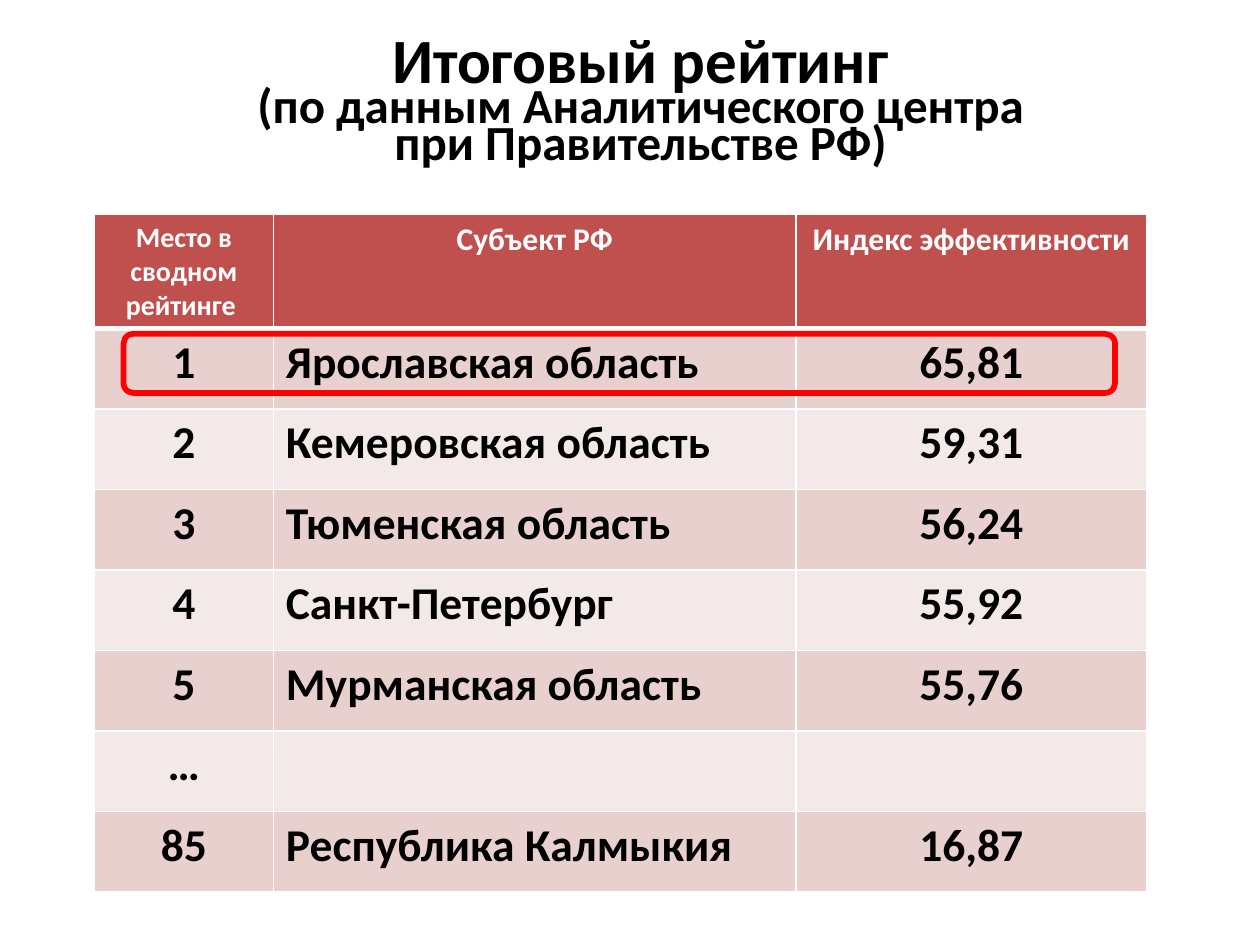
from typing import NamedTuple

import pptx
import pptx.dml.color
import pptx.enum.shapes
import pptx.enum.text
import pptx.oxml
import pptx.oxml.ns
import pptx.util

Pt = pptx.util.Pt
Align = pptx.enum.text.PP_ALIGN
Anchor = pptx.enum.text.MSO_ANCHOR

FONT = "Calibri"
BLACK, WHITE, RED = "000000", "FFFFFF", "FF0000"
HEAD, DARK, LIGHT = "C0504D", "E8D0CF", "F4E9E9"
THIN, THICK = 0.96, 3
PITCH = 10.6
WIDTHS = (102.2, 298.8, 200.2)
HEAD_H, ROW_H = 65.2, 46


class Box(NamedTuple):
    left: float
    top: float
    width: float
    height: float

    def points(self) -> list:
        return [Pt(side) for side in self]


class Place(NamedTuple):
    rank: str
    region: str = ""
    index: str = ""


class Line(NamedTuple):
    text: str
    size: float


TITLE = (
    Line("Итоговый рейтинг", 36),
    Line("(по данным Аналитического центра", 28),
    Line("при Правительстве РФ)", 28),
)
HEADER = (
    Line("Место в сводном рейтинге ", 16),
    Line("Субъект РФ", 18),
    Line("Индекс эффективности", 18),
)
PLACES = (
    Place("1", "Ярославская область", "65,81"),
    Place("2", "Кемеровская область", "59,31"),
    Place("3", "Тюменская область", "56,24"),
    Place("4", "Санкт-Петербург", "55,92"),
    Place("5", "Мурманская область", "55,76"),
    Place("…"),
    Place("85", "Республика Калмыкия", "16,87"),
)


def color(code: str) -> pptx.dml.color.RGBColor:
    return pptx.dml.color.RGBColor.from_string(code)


def write(para, text: str, *, size: float, ink: str = BLACK,
          align=Align.CENTER, pitch: float = 0, before: float = 0) -> None:
    """Fill a paragraph with bold text; pitch is an exact line spacing."""
    para.alignment = align
    if pitch:
        para.line_spacing = Pt(pitch)
    if before:
        para.space_before = Pt(before)
    run = para.add_run()
    run.text = text
    run.font.name = FONT
    run.font.size = Pt(size)
    run.font.bold = True
    run.font.color.rgb = color(ink)


def edge(cell, top: float, bottom: float) -> None:
    """Give a cell white borders, with its own top and bottom widths."""
    props = cell._tc.get_or_add_tcPr()
    sides = {"L": THIN, "R": THIN, "T": top, "B": bottom}
    for side, width in sides.items():
        props.append(pptx.oxml.parse_xml(
            f'<a:ln{side} {pptx.oxml.ns.nsdecls("a")} w="{Pt(width)}">'
            f'<a:solidFill><a:srgbClr val="{WHITE}"/></a:solidFill>'
            f'</a:ln{side}>'))


def paint(cell, fill: str, top: float = THIN, bottom: float = THIN) -> None:
    edge(cell, top, bottom)
    cell.fill.solid()
    cell.fill.fore_color.rgb = color(fill)


def add_title(slide, box: Box) -> None:
    frame = slide.shapes.add_textbox(*box.points()).text_frame
    frame.word_wrap = True
    frame.vertical_anchor = Anchor.MIDDLE
    for pos, line in enumerate(TITLE):
        para = frame.add_paragraph() if pos else frame.paragraphs[0]
        write(para, line.text, size=line.size, pitch=PITCH,
              before=PITCH if pos else 0)


def add_rating(slide, left: float, top: float) -> None:
    box = Box(left, top, sum(WIDTHS), HEAD_H + ROW_H * len(PLACES))
    table = slide.shapes.add_table(
        len(PLACES) + 1, len(WIDTHS), *box.points()).table
    table.horz_banding = False
    for col, width in zip(table.columns, WIDTHS):
        col.width = Pt(width)
    for pos, row in enumerate(table.rows):
        row.height = Pt(ROW_H if pos else HEAD_H)

    for col, line in enumerate(HEADER):
        cell = table.cell(0, col)
        paint(cell, HEAD, bottom=THICK)
        write(cell.text_frame.paragraphs[0], line.text,
              size=line.size, ink=WHITE)

    for row, place in enumerate(PLACES, 1):
        for col, text in enumerate(place):
            cell = table.cell(row, col)
            paint(cell, DARK if row % 2 else LIGHT,
                  top=THICK if row == 1 else THIN)
            if text:
                write(cell.text_frame.paragraphs[0], text, size=26,
                      align=Align.LEFT if col == 1 else Align.CENTER)


def add_frame(slide, box: Box) -> None:
    """Outline the leading row."""
    shape = slide.shapes.add_shape(
        pptx.enum.shapes.MSO_SHAPE.ROUNDED_RECTANGLE, *box.points())
    shape.shadow.inherit = False
    shape.fill.background()
    shape.line.color.rgb = color(RED)
    shape.line.width = Pt(3.25)


def main() -> None:
    deck = pptx.Presentation()
    deck.slide_width, deck.slide_height = Pt(720), Pt(540)
    slide = deck.slides.add_slide(deck.slide_layouts[6])
    add_title(slide, Box(42, 26, 648, 90))
    add_rating(slide, 54, 122.6)
    add_frame(slide, Box(70.6, 190.8, 566.6, 33.8))
    deck.save("out.pptx")


if __name__ == "__main__":
    main()
